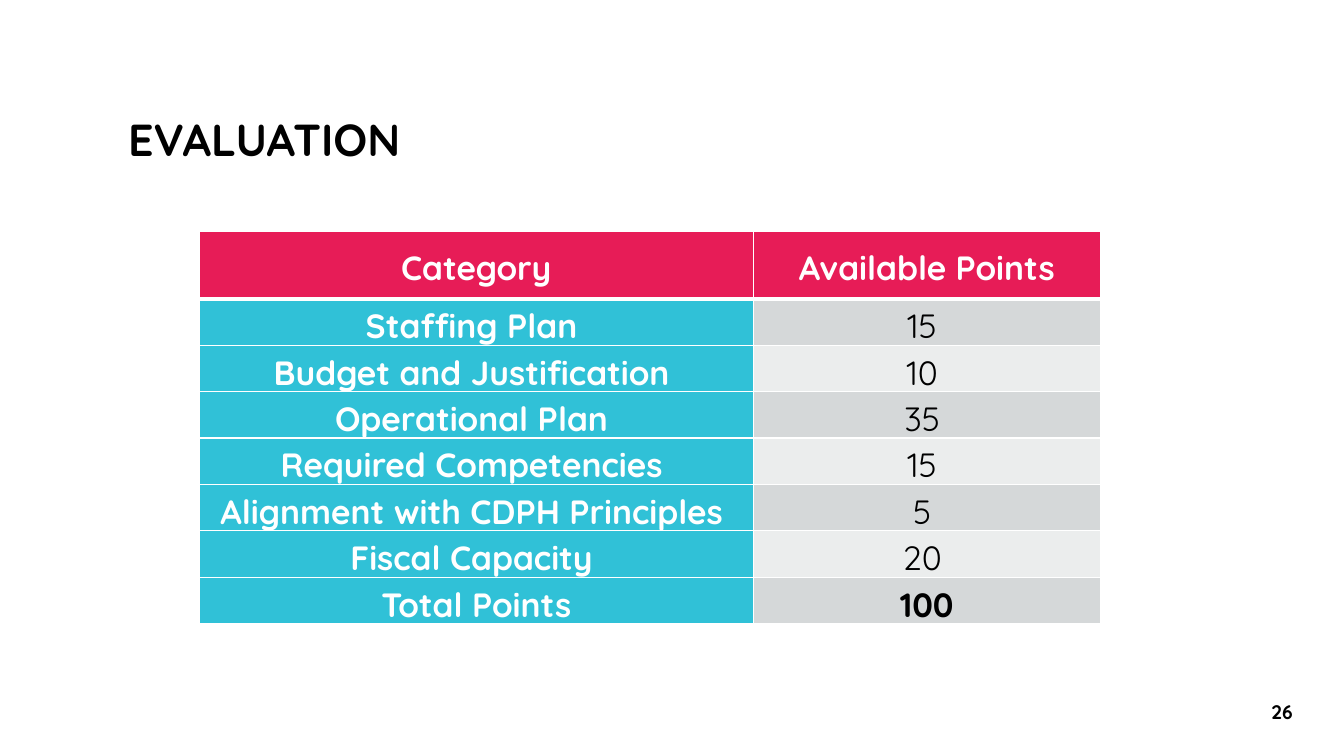
from lxml import etree
from pptx import Presentation
from pptx.dml.color import RGBColor
from pptx.enum import text
from pptx.oxml import ns
from pptx.util import Pt

TITLE = "EVALUATION"
PAGE_NUMBER = "26"
HEADINGS = ("Category", "Available Points")
SCORES = [
    ("Staffing Plan ", "15 "),
    ("Budget and Justification ", "10 "),
    ("Operational Plan ", "35 "),
    ("Required Competencies ", "15 "),
    ("Alignment with CDPH Principles ", "5 "),
    ("Fiscal Capacity ", "20 "),
    ("Total Points", "100"),
]


class Theme:
    font = "Quicksand"
    black, white = "000000", "FFFFFF"
    heading, category = "E71C57", "30C1D7"
    bands = ("D5D8D9", "EBEDED")
    title_size, table_size, page_size = 32, 24, 14
    rule, heavy_rule = 1, 3


SLIDE_SIZE = (960, 540)
TITLE_BOX = (84.24, 38.16, 826.56, 126.72)
PAGE_BOX = (890.64, 493.92, 50.4, 28.8)
TABLE_LEFT, TABLE_TOP = 142.2, 165.3
COLUMN_WIDTHS = (396, 247.68)
HEADING_HEIGHT, ROW_HEIGHT = 48.24, 32.4
CELL_INSET = 5.04


def write(frame, words, size, color=Theme.black, bold=True,
          align=text.PP_ALIGN.CENTER, spacing=1.0):
    frame.word_wrap = True
    frame.vertical_anchor = text.MSO_ANCHOR.MIDDLE
    paragraph = frame.paragraphs[0]
    paragraph.alignment = align
    paragraph.line_spacing = spacing
    run = paragraph.add_run()
    run.text = words
    run.font.name = Theme.font
    run.font.size = Pt(size)
    run.font.bold = bold
    run.font.color.rgb = RGBColor.from_string(color)


def add_border(cell, side, width):
    """Draw a white rule on one side: L, R, T or B."""
    properties = cell._tc.get_or_add_tcPr()
    line = etree.SubElement(properties, ns.qn("a:ln" + side), w=str(Pt(width)))
    fill = etree.SubElement(line, ns.qn("a:solidFill"))
    etree.SubElement(fill, ns.qn("a:srgbClr"), val=Theme.white)


def format_cell(cell, words, fill, color, bold, top, bottom):
    cell.margin_left = cell.margin_right = Pt(CELL_INSET)
    cell.margin_top = cell.margin_bottom = 0
    write(cell.text_frame, words, Theme.table_size, color, bold, spacing=1.15)
    cell.vertical_anchor = text.MSO_ANCHOR.MIDDLE
    for side, width in (("L", Theme.rule), ("R", Theme.rule),
                        ("T", top), ("B", bottom)):
        add_border(cell, side, width)
    cell.fill.solid()
    cell.fill.fore_color.rgb = RGBColor.from_string(fill)


def add_title(slide):
    title = slide.shapes.title
    title.left, title.top, title.width, title.height = map(Pt, TITLE_BOX)
    frame = title.text_frame
    frame.margin_top = frame.margin_bottom = 0
    frame.auto_size = text.MSO_AUTO_SIZE.NONE
    write(frame, TITLE, Theme.title_size, align=text.PP_ALIGN.LEFT, spacing=0.9)


def add_scores(slide):
    row_count = len(SCORES) + 1
    height = HEADING_HEIGHT + ROW_HEIGHT * len(SCORES)
    table = slide.shapes.add_table(
        row_count, len(HEADINGS), Pt(TABLE_LEFT), Pt(TABLE_TOP),
        Pt(sum(COLUMN_WIDTHS)), Pt(height)).table
    for column, width in zip(table.columns, COLUMN_WIDTHS):
        column.width = Pt(width)
    for r, entries in enumerate([HEADINGS, *SCORES]):
        table.rows[r].height = Pt(ROW_HEIGHT if r else HEADING_HEIGHT)
        top = Theme.heavy_rule if r == 1 else Theme.rule
        bottom = Theme.rule if r else Theme.heavy_rule
        for c, words in enumerate(entries):
            if r == 0:
                fill, color, bold = Theme.heading, Theme.white, True
            elif c == 0:
                fill, color, bold = Theme.category, Theme.white, True
            else:
                fill = Theme.bands[(r - 1) % 2]
                color, bold = Theme.black, r == row_count - 1
            format_cell(table.cell(r, c), words, fill, color, bold, top, bottom)


def main():
    deck = Presentation()
    deck.slide_width, deck.slide_height = map(Pt, SLIDE_SIZE)
    slide = deck.slides.add_slide(deck.slide_layouts.get_by_name("Title Only"))
    page = slide.shapes.add_textbox(*map(Pt, PAGE_BOX))
    write(page.text_frame, PAGE_NUMBER, Theme.page_size)
    add_title(slide)
    add_scores(slide)
    deck.save("out.pptx")


if __name__ == "__main__":
    main()
